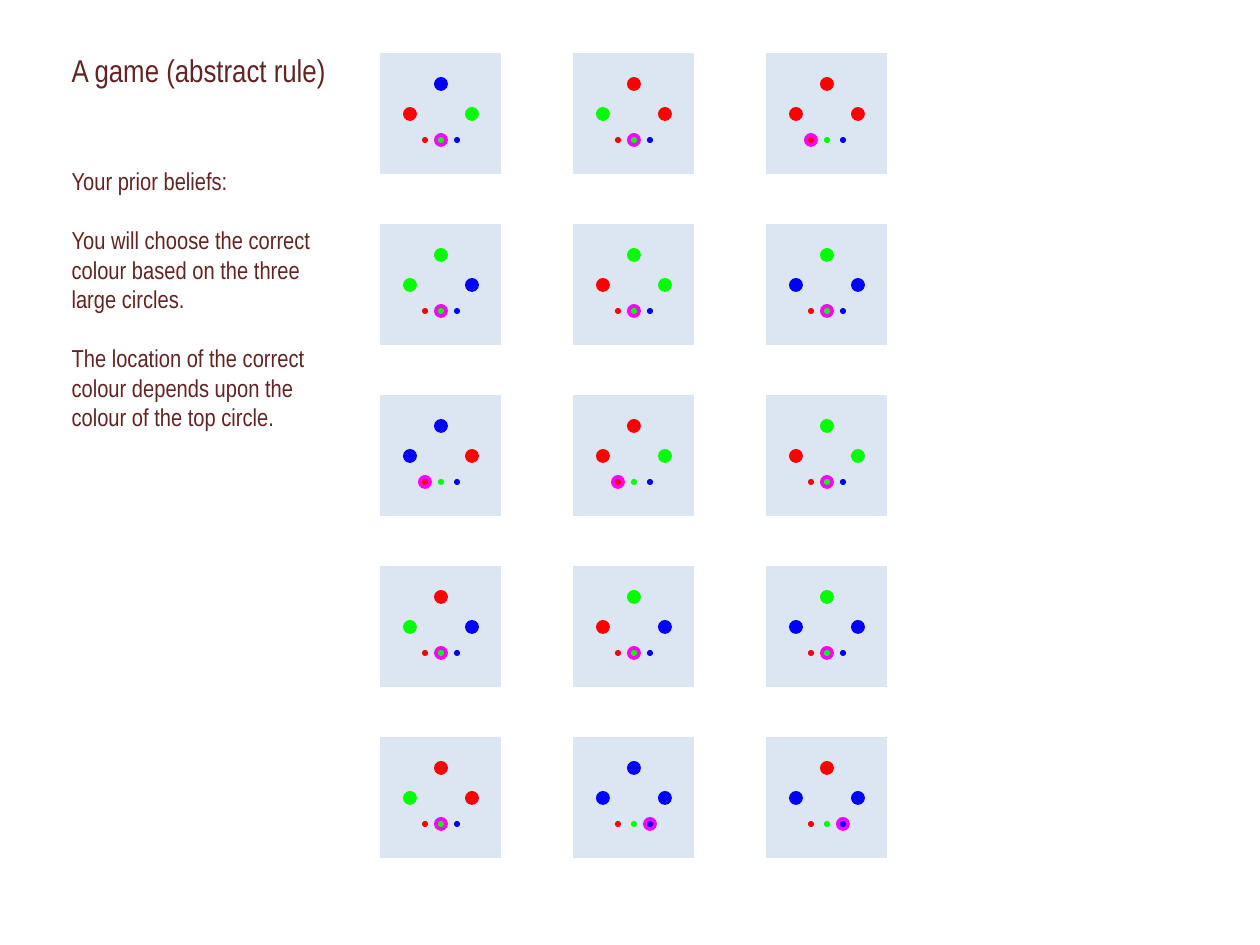
from lxml import etree
from pptx import Presentation
from pptx import util as u
from pptx.dml.color import RGBColor
from pptx.enum import shapes, text
from pptx.oxml.ns import qn

PX = u.Inches(1) // 126
FONT = "Arial Narrow"
COLOURS = {
    "text": "632523", "tile": "DCE6F2", "edge": "FFFFFF", "ring": "FF00FF",
    "R": "FF0000", "G": "00FF00", "B": "0000FF",
}

TITLE = "A game (abstract rule)"
BELIEFS = [
    "Your prior beliefs:",
    "You will choose the correct colour based on the three large circles.",
    "The location of the correct colour depends upon the colour of the top circle.",
]

# Each trial: colours of the left, top and right circles, then the ringed choice.
TRIALS = [
    ["RBG G", "GRR G", "RRR R"],
    ["GGB G", "RGG G", "BGB G"],
    ["BBR R", "RRG R", "RGG G"],
    ["GRB G", "RGB G", "BGB G"],
    ["GRR G", "BBB B", "BRB B"],
]
TILE_LEFT, TILE_TOP, TILE_SIZE = 379, 52, 123
COLUMN_PITCH, ROW_PITCH = 193, 171
CUE_CENTRES = [(31, 62), (62, 32), (93, 62)]
CHOICE_CENTRES = {"R": (46, 88), "G": (62, 88), "B": (78, 88)}
LARGE, SMALL = 14, 6


def colour(name):
    return RGBColor.from_string(COLOURS[name])


def place(shape, left, top, width, height):
    shape.left, shape.top = left * PX, top * PX
    shape.width, shape.height = width * PX, height * PX


def fill_placeholder(placeholder, box, lines, size, gap=0):
    """Write plain left-aligned lines, with gap points between paragraphs."""
    place(placeholder, *box)
    frame = placeholder.text_frame
    frame.word_wrap = True
    frame.auto_size = text.MSO_AUTO_SIZE.NONE
    frame.vertical_anchor = text.MSO_ANCHOR.TOP
    for index, line in enumerate(lines):
        paragraph = frame.add_paragraph() if index else frame.paragraphs[0]
        paragraph.alignment = text.PP_ALIGN.LEFT
        paragraph.space_before = u.Pt(gap if index else 0)
        properties = paragraph._p.get_or_add_pPr()
        properties.set("marL", "0")
        properties.set("indent", "0")
        etree.SubElement(properties, qn("a:buNone"))
        run = paragraph.add_run()
        run.text = line
        run.font.name = FONT
        run.font.size = u.Pt(size)
        run.font.color.rgb = colour("text")


def add_filled(slide, kind, box, fill):
    shape = slide.shapes.add_shape(kind, *(length * PX for length in box))
    shape.shadow.inherit = False
    shape.fill.solid()
    shape.fill.fore_color.rgb = colour(fill)
    shape.line.fill.background()
    return shape


def add_circle(slide, centre, diameter, fill):
    x, y = centre
    box = (x - diameter // 2, y - diameter // 2, diameter, diameter)
    add_filled(slide, shapes.MSO_SHAPE.OVAL, box, fill)


def add_trial(slide, left, top, trial):
    cues, choice = trial.split()
    tile = add_filled(slide, shapes.MSO_SHAPE.RECTANGLE,
                      (left, top, TILE_SIZE, TILE_SIZE), "tile")
    tile.line.color.rgb = colour("edge")
    tile.line.width = 0
    for (x, y), cue in zip(CUE_CENTRES, cues):
        add_circle(slide, (left + x, top + y), LARGE, cue)
    for option, (x, y) in CHOICE_CENTRES.items():
        centre = (left + x, top + y)
        if option == choice:
            add_circle(slide, centre, LARGE, "ring")
        add_circle(slide, centre, SMALL, option)


def main():
    presentation = Presentation()
    presentation.slide_width = u.Inches(10)
    presentation.slide_height = u.Inches(7.5)
    slide = presentation.slides.add_slide(presentation.slide_layouts[1])
    title, body = slide.placeholders
    fill_placeholder(title, (59, 45, 290, 52), [TITLE], 18)
    fill_placeholder(body, (59, 160, 280, 394), BELIEFS, 14, gap=17)
    for row, trials in enumerate(TRIALS):
        for column, trial in enumerate(trials):
            add_trial(slide, TILE_LEFT + column * COLUMN_PITCH,
                      TILE_TOP + row * ROW_PITCH, trial)
    presentation.save("out.pptx")


if __name__ == "__main__":
    main()
